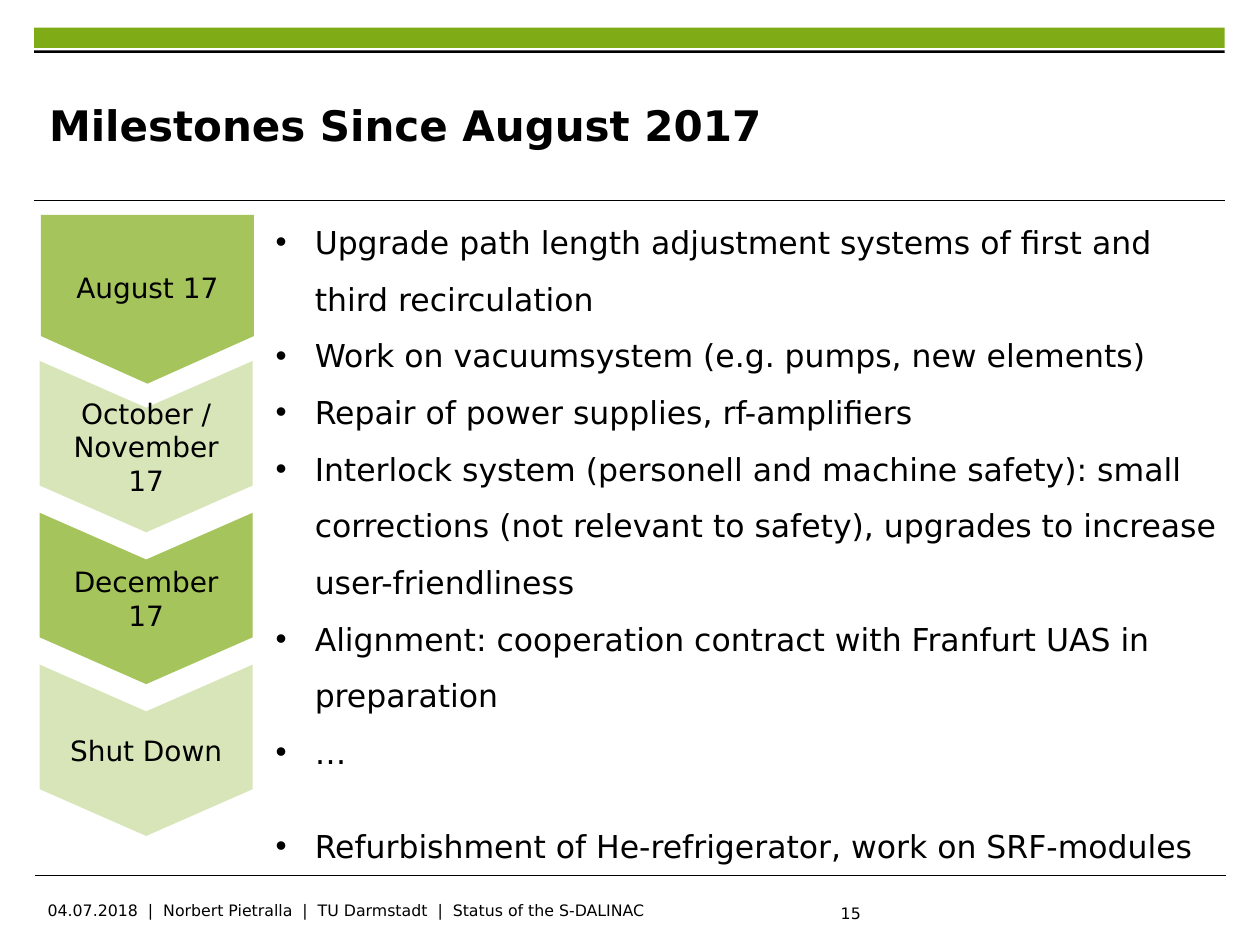
from typing import Any, NamedTuple

from lxml.etree import SubElement
from pptx import Presentation
from pptx.dml.color import RGBColor
from pptx.enum.shapes import MSO_CONNECTOR, MSO_SHAPE
from pptx.enum.text import MSO_ANCHOR as Anchor, PP_ALIGN as Align
from pptx.oxml.ns import qn
from pptx.util import Inches, Pt

GREEN = "7FAB16"
BLACK = "000000"
FONT = "DejaVu Sans"


class Milestone(NamedTuple):
    label: str
    left: float
    top: float
    length: float
    preset: MSO_SHAPE
    notch: float
    opacity: int


class Caption(NamedTuple):
    text: str
    box: tuple[float, float, float, float]
    size: int
    frame: dict[str, Any]
    align: Align = Align.LEFT
    bold: bool = False


MILESTONE_WIDTH = 1.69
MILESTONES = [Milestone("August 17", 0.5, 1.53, 1.34, MSO_SHAPE.PENTAGON, 0.282, 70)] + [
    Milestone(label, 0.48, 2.7 + 1.205 * row, 1.36, MSO_SHAPE.CHEVRON, 0.273, opacity)
    for row, (label, opacity) in enumerate(
        [("October / November 17", 30), ("December 17", 70), ("Shut Down", 30)]
    )
]

NO_INSETS = dict.fromkeys(["margin_left", "margin_top", "margin_right", "margin_bottom"], 0)
CAPTIONS = [
    Caption("04.07.2018  |  Norbert Pietralla  |  TU Darmstadt  |  Status of the S-DALINAC",
            (0.28, 7.1, 7.88, 0.25), 9, {"word_wrap": True}),
    Caption("15", (6.42, 7.12, 0.51, 0.25), 9, {"word_wrap": False}, Align.RIGHT),
    Caption("Milestones Since August 2017", (0.39, 0.53, 7.26, 0.92), 24,
            {"word_wrap": True, "vertical_anchor": Anchor.MIDDLE, **NO_INSETS}, bold=True),
]

TASKS = [
    "Upgrade path length adjustment systems of first and third recirculation",
    "Work on vacuumsystem (e.g. pumps, new elements)",
    "Repair of power supplies, rf-amplifiers",
    "Interlock system (personell and machine safety): small corrections "
    "(not relevant to safety), upgrades to increase user-friendliness",
    "Alignment: cooperation contract with Franfurt UAS in preparation",
    "…",
]
SHUTDOWN_TASK = "Refurbishment of He-refrigerator, work on SRF-modules"


def color(hex_value: str) -> RGBColor:
    return RGBColor.from_string(hex_value)


def apply_format(target: Any, values: dict[str, Any]) -> None:
    for name, value in values.items():
        setattr(target, name, value)


def write(paragraph: Any, text: str, size: int, align: Align = Align.LEFT,
          bold: bool = False) -> None:
    paragraph.alignment = align
    run = paragraph.add_run()
    run.text = text
    apply_format(run.font, {"name": FONT, "size": Pt(size), "bold": bold})
    run.font.color.rgb = color(BLACK)


def draw_shape(slide: Any, preset: MSO_SHAPE, box: tuple[float, ...], fill: str) -> Any:
    shape = slide.shapes.add_shape(preset, *map(Inches, box))
    shape.shadow.inherit = False
    shape.fill.solid()
    shape.fill.fore_color.rgb = color(fill)
    shape.line.fill.background()
    return shape


def draw_rule(slide: Any, left: float, y: float, right: float) -> None:
    rule = slide.shapes.add_connector(
        MSO_CONNECTOR.STRAIGHT, Inches(left), Inches(y), Inches(right), Inches(y))
    rule.line.width = Pt(0.6)
    rule.line.color.rgb = color(BLACK)
    SubElement(rule._element.spPr, qn("a:effectLst"))


def draw_caption(slide: Any, caption: Caption) -> None:
    frame = slide.shapes.add_textbox(*map(Inches, caption.box)).text_frame
    apply_format(frame, caption.frame)
    write(frame.paragraphs[0], caption.text, caption.size, caption.align, caption.bold)


def draw_milestone(slide: Any, milestone: Milestone) -> None:
    box = (milestone.left, milestone.top, milestone.length, MILESTONE_WIDTH)
    arrow = draw_shape(slide, milestone.preset, box, GREEN)
    arrow.rotation = 90
    arrow.adjustments[0] = milestone.notch
    tint = arrow._element.spPr.find(qn("a:solidFill")).find(qn("a:srgbClr"))
    SubElement(tint, qn("a:alpha"), val=str(milestone.opacity * 1000))
    frame = arrow.text_frame
    apply_format(frame, {"word_wrap": True, "vertical_anchor": Anchor.MIDDLE})
    frame._txBody.bodyPr.set("vert", "vert270")
    write(frame.paragraphs[0], milestone.label, 16, Align.CENTER)


def draw_tasks(slide: Any) -> None:
    box = (2.09, 1.57, 7.74, 5.4)
    frame = slide.shapes.add_textbox(*map(Inches, box)).text_frame
    frame.word_wrap = True
    for index, task in enumerate([*TASKS, SHUTDOWN_TASK]):
        paragraph = frame.add_paragraph() if index else frame.paragraphs[0]
        properties = paragraph._p.get_or_add_pPr()
        properties.set("marL", str(Inches(0.31)))
        properties.set("indent", str(-Inches(0.31)))
        paragraph.line_spacing = 1.5
        if task == SHUTDOWN_TASK:
            paragraph.space_before = Pt(21)
        SubElement(properties, qn("a:buFont"), typeface="Arial")
        SubElement(properties, qn("a:buChar"), char="•")
        write(paragraph, task, 18)


def main() -> None:
    deck = Presentation()
    apply_format(deck, {"slide_width": Inches(10), "slide_height": Inches(7.5)})
    slide = deck.slides.add_slide(deck.slide_layouts[6])
    draw_shape(slide, MSO_SHAPE.RECTANGLE, (0.27, 0.22, 9.45, 0.16), GREEN)
    draw_shape(slide, MSO_SHAPE.RECTANGLE, (0.27, 0.4, 9.45, 0.02), BLACK)
    draw_rule(slide, 0.27, 1.59, 9.72)
    draw_rule(slide, 0.28, 6.95, 9.73)
    for caption in CAPTIONS:
        draw_caption(slide, caption)
    for milestone in MILESTONES:
        draw_milestone(slide, milestone)
    draw_tasks(slide)
    deck.save("out.pptx")


if __name__ == "__main__":
    main()
